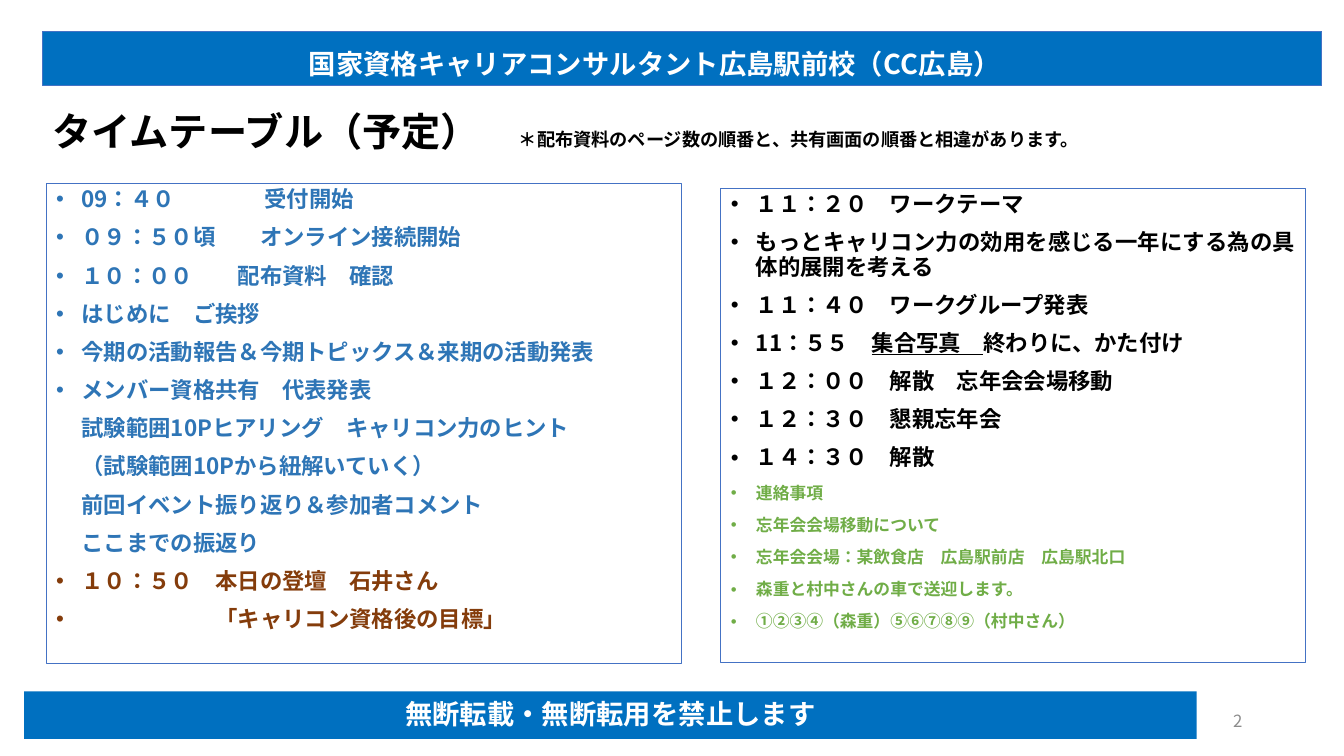
"""Build the timetable slide: two agenda panels between blue bands."""
from lxml import etree
from pptx import Presentation
from pptx import util as u
from pptx.dml.color import RGBColor
from pptx.enum import lang, shapes, text
from pptx.oxml.ns import qn

FONT = "Noto Sans CJK JP"
BLUE, BORDER, WHITE, BLACK = "0070C0", "4472C4", "FFFFFF", "000000"
LEFT, CENTER = text.PP_ALIGN.LEFT, text.PP_ALIGN.CENTER
RIGHT, JUSTIFY = text.PP_ALIGN.RIGHT, text.PP_ALIGN.JUSTIFY
TOP, MIDDLE, BOTTOM = text.MSO_ANCHOR.TOP, text.MSO_ANCHOR.MIDDLE, text.MSO_ANCHOR.BOTTOM

WIDE, WIDER = {"spacing": 16}, {"spacing": 48}
UNDERLINED = {"underline": True}
HEADING = [("タイムテーブル（予定）　", {"size": 28}),
           "＊配布資料のページ数の順番と、共有画面の順番と相違があります。"]

MORNING = {"size": 16, "color": "2E75B6", "bullet": True}
DETAIL = {**MORNING, "bullet": False}
SPEAKER = {**MORNING, "color": "843C0B", "align": JUSTIFY}
AFTERNOON = {"size": 16, "color": BLACK, "bullet": True, "align": JUSTIFY}
NOTICE = {"size": 12, "color": "70AD47", "bullet": True}

PANELS = [
    ((0.46, 1.82, 6.3, 4.76), [
        (MORNING, ["09：４０", ("　", WIDER), "受付開始"]),
        (MORNING, ["０９：５０頃", ("　", WIDE), "オンライン接続開始"]),
        (MORNING, ["１０：００", ("　", WIDE), "配布資料　確認"]),
        (MORNING, ["はじめに　ご挨拶"]),
        (MORNING, ["今期の活動報告＆今期トピックス＆来期の活動発表"]),
        (MORNING, ["メンバー資格共有　代表発表"]),
        (DETAIL, ["試験範囲10Pヒアリング　キャリコン力のヒント"]),
        (DETAIL, ["（試験範囲10Pから紐解いていく）"]),
        (DETAIL, ["前回イベント振り返り＆参加者コメント"]),
        (DETAIL, ["ここまでの振返り"]),
        (SPEAKER, ["１０：５０　本日の登壇　石井さん"]),
        ({**SPEAKER, "margin": 1.58}, ["「キャリコン資格後の目標」"]),
    ]),
    ((7.15, 1.87, 5.8, 4.7), [
        (AFTERNOON, ["１１：２０　ワークテーマ"]),
        (AFTERNOON, ["もっとキャリコン力の効用を感じる一年にする為の具体的展開を考える"]),
        (AFTERNOON, ["１１：４０　ワークグループ発表"]),
        (AFTERNOON, ["11：５５　", ("集合写真　", UNDERLINED), "終わりに、かた付け"]),
        (AFTERNOON, ["１２：００　解散　忘年会会場移動"]),
        (AFTERNOON, ["１２：３０　懇親忘年会"]),
        (AFTERNOON, ["１４：３０　解散"]),
        (NOTICE, ["連絡事項"]),
        (NOTICE, ["忘年会会場移動について"]),
        (NOTICE, ["忘年会会場：某飲食店　広島駅前店　広島駅北口"]),
        (NOTICE, ["森重と村中さんの車で送迎します。"]),
        (NOTICE, ["①②③④（森重）⑤⑥⑦⑧⑨（村中さん）"]),
    ]),
]

BANDS = [
    ((0.42, 0.31, 12.69, 0.54), BORDER, BOTTOM, 0.64,
     "国家資格キャリアコンサルタント広島駅前校（CC広島）"),
    ((0.24, 6.86, 11.63, 0.47), None, MIDDLE, 0.1,
     "無断転載・無断転用を禁止します"),
]


def rgb(color):
    return RGBColor.from_string(color)


def add_box(slide, place, fill=None, line=None):
    shape = slide.shapes.add_shape(shapes.MSO_SHAPE.RECTANGLE, *map(u.Inches, place))
    shape.shadow.inherit = False
    if fill:
        shape.fill.solid()
        shape.fill.fore_color.rgb = rgb(fill)
    else:
        shape.fill.background()
    if line:
        shape.line.color.rgb = rgb(line)
        shape.line.width = u.Pt(0.75)
    else:
        shape.line.fill.background()
    return shape


def add_text_box(slide, place):
    return slide.shapes.add_textbox(*map(u.Inches, place))


def set_bullet(paragraph, margin, hanging):
    properties = paragraph._p.get_or_add_pPr()
    properties.set("marL", str(u.Inches(margin)))
    properties.set("indent", str(-u.Inches(margin) if hanging else 0))
    if hanging:
        defaults = properties.find(qn("a:defRPr"))
        defaults.addprevious(etree.Element(qn("a:buFont"), typeface="Arial"))
        defaults.addprevious(etree.Element(qn("a:buChar"), char="•"))


def write_paragraph(paragraph, parts, size, color, bold=True, align=LEFT,
                    bullet=None, margin=0.25, leading=0.9):
    paragraph.alignment = align
    paragraph.line_spacing = leading
    font = paragraph.font
    font.size, font.bold, font.name = u.Pt(size), bold, FONT
    font.language_id = lang.MSO_LANGUAGE_ID.JAPANESE
    font.color.rgb = rgb(color)
    etree.SubElement(font._element, qn("a:ea"), typeface=FONT)
    if bullet is not None:
        paragraph.space_before = u.Pt(10)
        set_bullet(paragraph, margin, bullet)
    for part in parts:
        words, style = (part, {}) if isinstance(part, str) else part
        run = paragraph.add_run()
        run.text = words
        if "size" in style:
            run.font.size = u.Pt(style["size"])
        if "underline" in style:
            run.font.underline = True
        if "spacing" in style:
            run._r.get_or_add_rPr().set("spc", str(style["spacing"] * 100))


def write(shape, rows, anchor=TOP):
    frame = shape.text_frame
    frame.word_wrap = True
    frame.vertical_anchor = anchor
    for index, (style, parts) in enumerate(rows):
        paragraph = frame.add_paragraph() if index else frame.paragraphs[0]
        write_paragraph(paragraph, parts, **style)


def main():
    presentation = Presentation()
    presentation.slide_width, presentation.slide_height = u.Inches(13.33), u.Inches(7.5)
    slide = presentation.slides.add_slide(presentation.slide_layouts[6])

    heading = add_text_box(slide, (0.42, 1.06, 10.51, 0.54))
    write(heading, [({"size": 13, "color": BLACK}, HEADING)], MIDDLE)

    for place, rows in PANELS:
        write(add_box(slide, place, line=BORDER), rows)

    for place, line, anchor, right_inset, words in BANDS:
        band = add_box(slide, place, BLUE, line)
        band.text_frame.margin_right = u.Inches(right_inset)
        write(band, [({"size": 19.5, "color": WHITE, "align": CENTER}, [words])], anchor)

    number = add_text_box(slide, (9.42, 6.95, 3, 0.4))
    number_style = {"size": 12, "color": "8C8C8C", "bold": False, "align": RIGHT, "leading": 1.0}
    write(number, [(number_style, ["2"])], MIDDLE)

    presentation.save("out.pptx")


if __name__ == "__main__":
    main()
